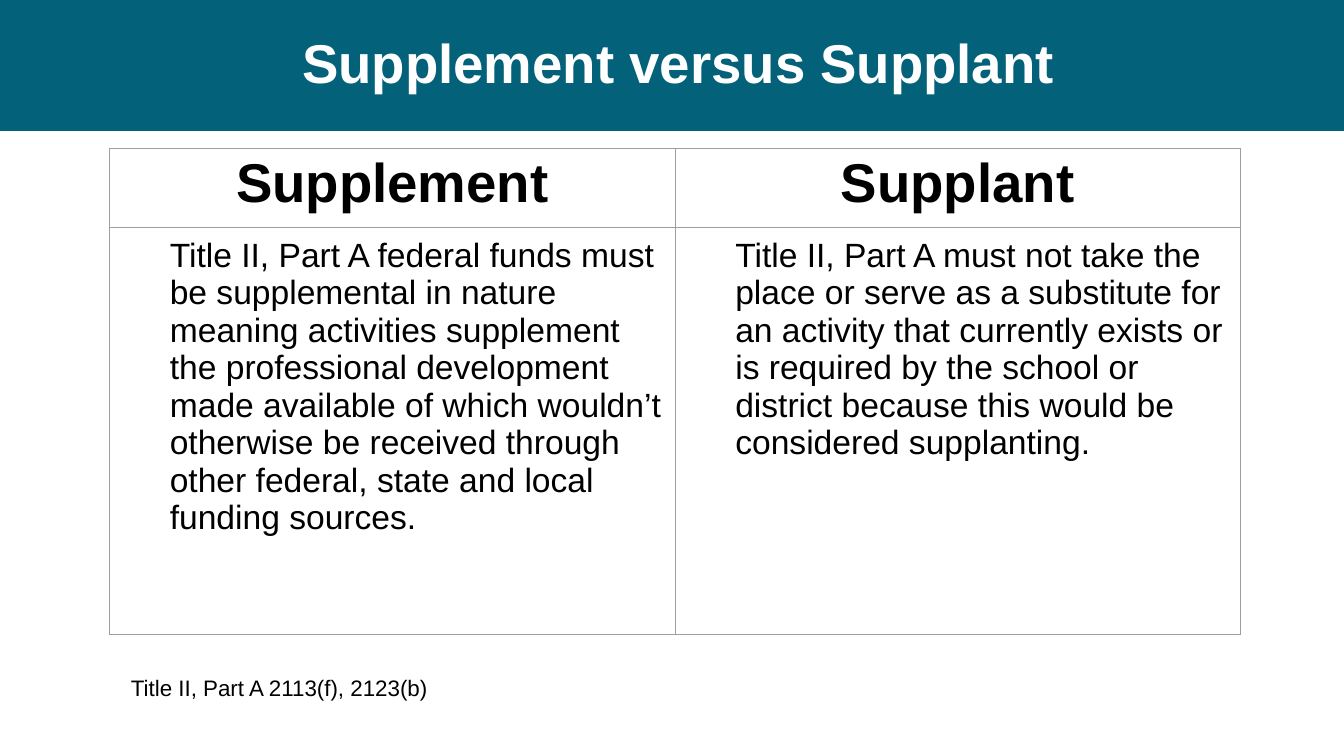
from lxml import etree
from pptx import Presentation
from pptx.dml.color import RGBColor
from pptx.enum.shapes import MSO_SHAPE
from pptx.enum.text import MSO_ANCHOR, PP_ALIGN
from pptx.oxml.ns import qn
from pptx.util import Cm, Pt

RECT = MSO_SHAPE.RECTANGLE
MIDDLE = MSO_ANCHOR.MIDDLE
LEFT, CENTER = PP_ALIGN.LEFT, PP_ALIGN.CENTER
FONT = "Arial"
TEAL, WHITE, BLACK, GREY = "03617A", "FFFFFF", "000000", "9E9E9E"
WIDTH, BAND_HEIGHT = Cm(33.87), Cm(3.3)
PAD = Cm(0.25)
COLUMNS = [
    ("Supplement",
     "Title II, Part A federal funds must be supplemental in nature meaning "
     "activities supplement the professional development made available of "
     "which wouldn’t otherwise be received through other federal, state and "
     "local funding sources."),
    ("Supplant",
     "Title II, Part A must not take the place or serve as a substitute for an "
     "activity that currently exists or is required by the school or district "
     "because this would be considered supplanting."),
]


def rgb(value):
    """Turn a hex string into a colour."""
    return RGBColor.from_string(value)


def write(tf, text, size, color=BLACK, bold=False, align=LEFT):
    """Put one formatted paragraph into a text frame and return it."""
    tf.word_wrap = True
    p = tf.paragraphs[0]
    p.text = text
    p.alignment = align
    p.font.name, p.font.size, p.font.bold = FONT, Pt(size), bold
    p.font.color.rgb = rgb(color)
    return p


def add_band(s):
    """Draw the title band behind everything else."""
    sp = s.shapes.add_shape(RECT, 0, 0, WIDTH, BAND_HEIGHT)
    sp.shadow.inherit = False
    sp.fill.solid()
    sp.fill.fore_color.rgb = rgb(TEAL)
    sp.line.fill.background()
    s.shapes._spTree.insert(2, sp._element)


def set_title(s, text):
    """Place and format the title placeholder."""
    sp = s.shapes.title
    sp.left, sp.top, sp.width, sp.height = Cm(2.49), 0, Cm(29.21), BAND_HEIGHT
    sp.text_frame.vertical_anchor = MIDDLE
    write(sp.text_frame, text, 39, WHITE, True, CENTER).line_spacing = 0.9


def format_cell(cell):
    """Give a cell even margins, a white fill and thin grey borders."""
    cell.margin_left = cell.margin_right = PAD
    cell.margin_top = cell.margin_bottom = PAD
    tcPr = cell._tc.get_or_add_tcPr()
    for side in ("a:lnL", "a:lnR", "a:lnT", "a:lnB"):
        ln = etree.SubElement(tcPr, qn(side), w=str(Pt(0.75)))
        fill = etree.SubElement(ln, qn("a:solidFill"))
        etree.SubElement(fill, qn("a:srgbClr"), val=GREY)
    cell.fill.solid()
    cell.fill.fore_color.rgb = rgb(WHITE)


def add_comparison(s, columns):
    """Add the table with a heading and a description per column."""
    table = s.shapes.add_table(2, len(columns), Cm(2.76), Cm(3.74),
                               Cm(28.5), Cm(12.24)).table
    table.rows[0].height, table.rows[1].height = Cm(1.98), Cm(10.26)
    for col, (heading, body) in enumerate(columns):
        head, text = table.cell(0, col), table.cell(1, col)
        format_cell(head)
        format_cell(text)
        p = write(head.text_frame, heading, 39, bold=True, align=CENTER)
        p.line_spacing, p.space_before = 0.9, Pt(7.5)
        p = write(text.text_frame, body, 24)
        p._p.get_or_add_pPr().set("marL", str(Cm(1.27)))


def add_citation(s, text):
    """Add the source note below the table."""
    sp = s.shapes.add_textbox(Cm(3.05), Cm(16.74), Cm(10.5), Cm(1.42))
    tf = sp.text_frame
    tf.margin_left = tf.margin_right = tf.margin_top = tf.margin_bottom = PAD
    write(tf, text, 16)


def main():
    """Build and save the slide."""
    prs = Presentation()
    prs.slide_width, prs.slide_height = WIDTH, Cm(19.05)
    s = prs.slides.add_slide(prs.slide_layouts[5])
    add_band(s)
    set_title(s, "Supplement versus Supplant")
    add_comparison(s, COLUMNS)
    add_citation(s, "Title II, Part A 2113(f), 2123(b)")
    prs.save("out.pptx")


if __name__ == "__main__":
    main()
